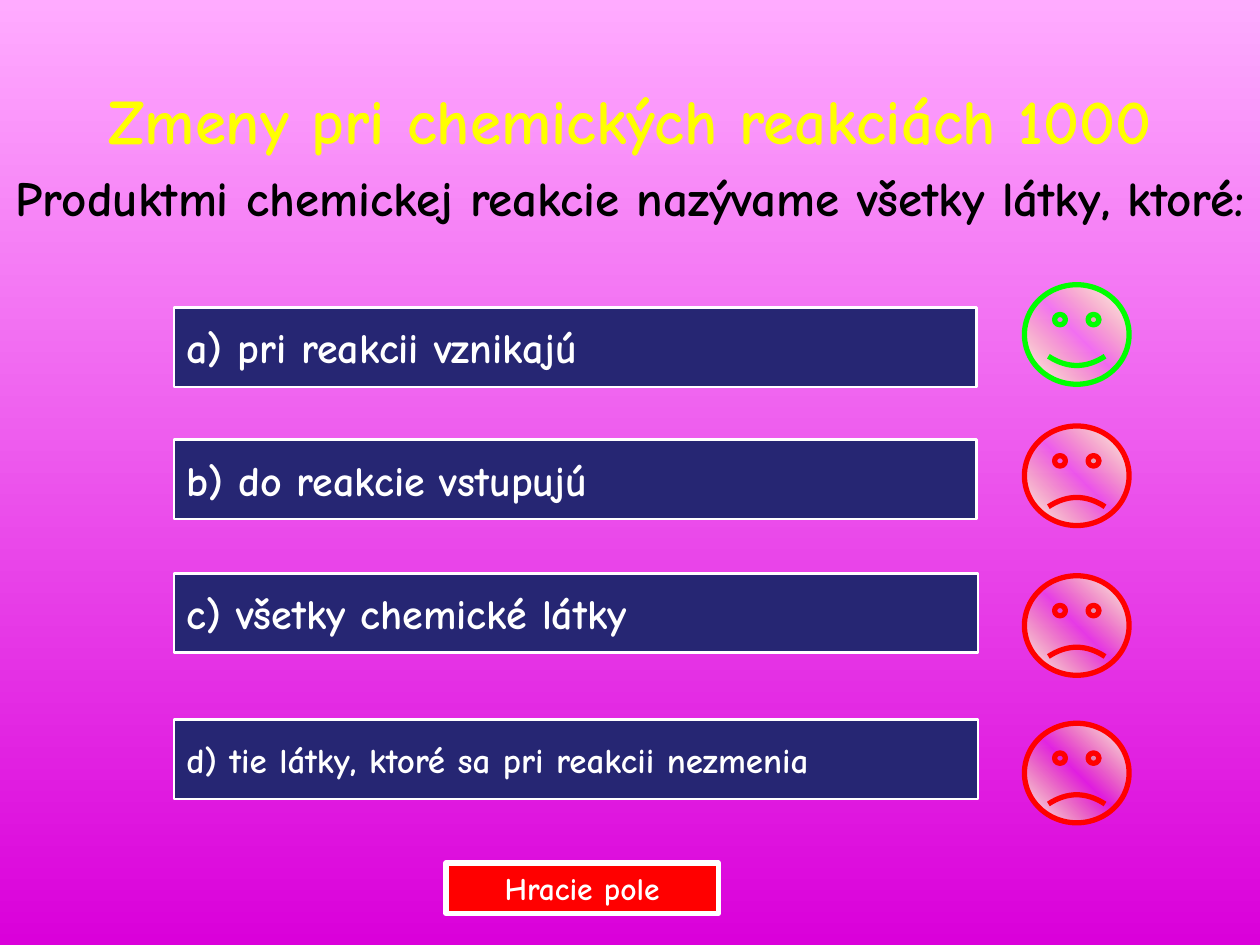
import copy
from dataclasses import dataclass

import lxml.etree
import pptx
import pptx.dml.color
import pptx.enum.shapes
import pptx.enum.text
import pptx.oxml.ns
import pptx.util

Pt = pptx.util.Pt
RGBColor = pptx.dml.color.RGBColor
Shape = pptx.enum.shapes.MSO_SHAPE
Align = pptx.enum.text.PP_ALIGN
Anchor = pptx.enum.text.MSO_ANCHOR

FONT = "Comic Neue"
WHITE = RGBColor(0xFF, 0xFF, 0xFF)
BLACK = RGBColor(0x00, 0x00, 0x00)
YELLOW = RGBColor(0xFF, 0xFF, 0x00)
PALE_YELLOW = RGBColor(0xFF, 0xFF, 0x66)
NAVY = RGBColor(0x26, 0x26, 0x73)
RED = RGBColor(0xFF, 0x00, 0x00)
GREEN = RGBColor(0x00, 0xFF, 0x00)
PINK = RGBColor(0xFF, 0xAB, 0xFF)
MAGENTA = RGBColor(0xDA, 0x00, 0xDA)

ANSWER_LEFT, ANSWER_HEIGHT = 99.4, 45.4
FACE_LEFT, FACE_WIDTH, FACE_HEIGHT = 585.4, 59.8, 56.9
FACE_CURVE = 0.047


@dataclass
class Button:
    text: str
    left: float
    top: float
    width: float
    height: float
    size: float
    fill: RGBColor = NAVY
    border: float = 1.5
    align: Align = Align.LEFT


@dataclass
class Answer:
    text: str
    top: float
    width: float
    size: float
    face_top: float
    correct: bool = False


@dataclass
class Heading:
    text: str
    size: float
    color: RGBColor


HEADINGS = [
    Heading("Zmeny pri chemických reakciách 1000", 36, YELLOW),
    Heading("Produktmi chemickej reakcie nazývame všetky látky, ktoré:", 28, BLACK),
]
ANSWERS = [
    Answer("a) pri reakcii vznikajú", 175.7, 458.6, 24, 162.7, True),
    Answer("b) do reakcie vstupujú", 251.3, 458.6, 24, 243.4),
    Answer("c) všetky chemické látky", 327.6, 459.4, 24, 329),
    Answer("d) tie látky, ktoré sa pri reakcii nezmenia", 411.1, 459.4, 20, 413.3),
]
BOARD_BUTTON = Button("Hracie pole", 254.9, 493.2, 155.5, 28.8, 18, RED, 3, Align.CENTER)


def add_span(para, text: str, size: float, color: RGBColor) -> None:
    span = para.add_run()
    span.text = text
    span.font.name = FONT
    span.font.size = Pt(size)
    span.font.bold = True
    span.font.color.rgb = color


def set_gradient(fill, start: RGBColor, end: RGBColor, angle: float) -> None:
    fill.gradient()
    fill.gradient_angle = angle
    for stop, color, position in zip(fill.gradient_stops, (start, end), (0, 1)):
        stop.color.rgb = color
        stop.position = position


def add_clear_middle(shape, color: RGBColor) -> None:
    qn = pptx.oxml.ns.qn
    stops = shape.element.spPr.find(".//" + qn("a:gsLst"))
    middle = copy.deepcopy(stops[0])
    middle.set("pos", "50000")
    tint = middle.find(qn("a:srgbClr"))
    tint.set("val", str(color))
    lxml.etree.SubElement(tint, qn("a:alpha")).set("val", "0")
    stops.insert(1, middle)


def add_headings(page, headings: list[Heading]) -> None:
    title = page.shapes.title
    title.left, title.top, title.width, title.height = Pt(0), Pt(43.2), Pt(720), Pt(54)
    frame = title.text_frame
    frame.auto_size = pptx.enum.text.MSO_AUTO_SIZE.NONE
    frame.word_wrap = True
    frame.vertical_anchor = Anchor.TOP
    frame.margin_left = frame.margin_right = Pt(0)
    for index, heading in enumerate(headings):
        para = frame.add_paragraph() if index else frame.paragraphs[0]
        para.alignment = Align.CENTER
        para.space_before = Pt(heading.size * 0.2)
        add_span(para, heading.text, heading.size, heading.color)


def add_button(page, button: Button) -> None:
    box = page.shapes.add_shape(
        Shape.ACTION_BUTTON_CUSTOM,
        Pt(button.left), Pt(button.top), Pt(button.width), Pt(button.height),
    )
    box.shadow.inherit = False
    box.fill.solid()
    box.fill.fore_color.rgb = button.fill
    box.line.color.rgb = WHITE
    box.line.width = Pt(button.border)
    frame = box.text_frame
    frame.word_wrap = True
    frame.vertical_anchor = Anchor.MIDDLE
    para = frame.paragraphs[0]
    para.alignment = button.align
    add_span(para, button.text, button.size, WHITE)


def add_face(page, top: float, happy: bool) -> None:
    face = page.shapes.add_shape(
        Shape.SMILEY_FACE, Pt(FACE_LEFT), Pt(top), Pt(FACE_WIDTH), Pt(FACE_HEIGHT)
    )
    face.shadow.inherit = False
    face.adjustments[0] = FACE_CURVE if happy else -FACE_CURVE
    set_gradient(face.fill, WHITE, WHITE, 45)
    add_clear_middle(face, PALE_YELLOW)
    face.line.color.rgb = GREEN if happy else RED
    face.line.width = Pt(3)


def main() -> None:
    deck = pptx.Presentation()
    deck.slide_width, deck.slide_height = Pt(720), Pt(540)
    page = deck.slides.add_slide(deck.slide_layouts.get_by_name("Title Only"))
    set_gradient(page.background.fill, PINK, MAGENTA, 270)
    add_headings(page, HEADINGS)
    for answer in ANSWERS:
        add_button(page, Button(answer.text, ANSWER_LEFT, answer.top,
                                answer.width, ANSWER_HEIGHT, answer.size))
        add_face(page, answer.face_top, answer.correct)
    add_button(page, BOARD_BUTTON)
    deck.save("out.pptx")


if __name__ == "__main__":
    main()
